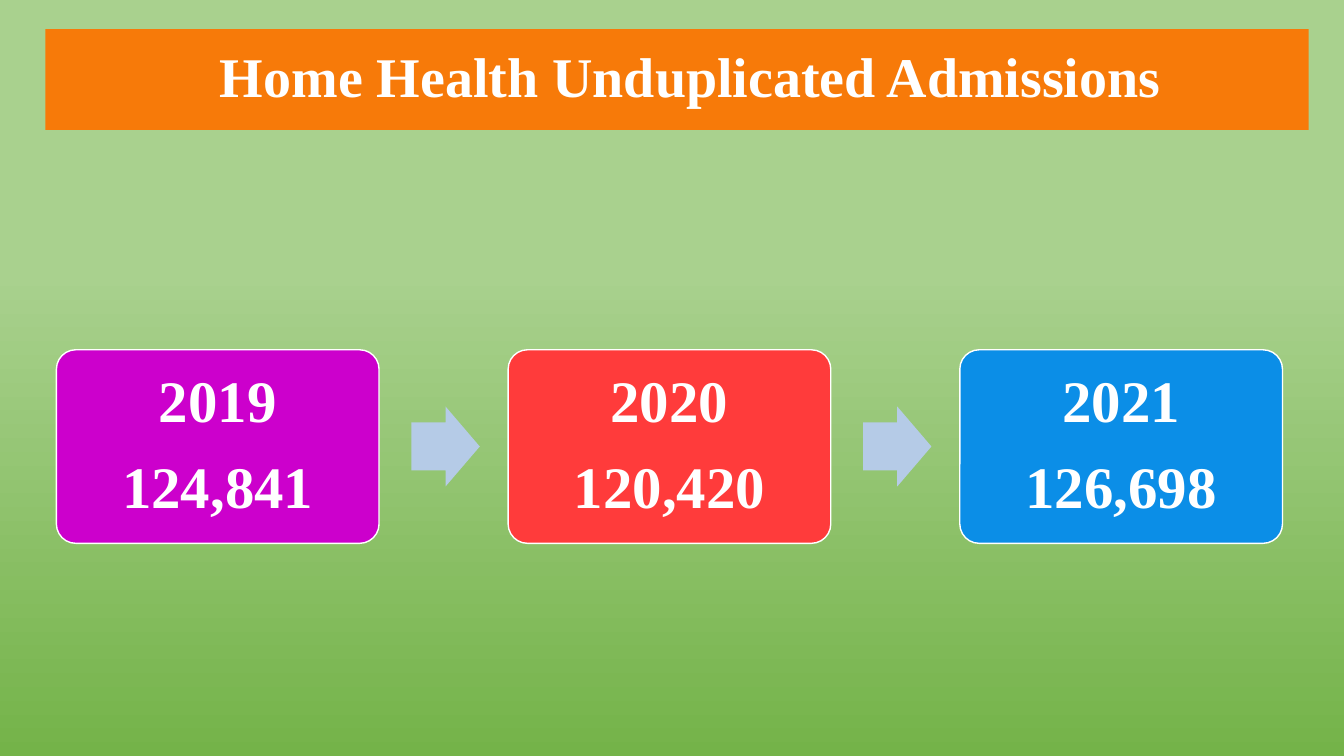
from pptx import Presentation
from pptx.dml.color import RGBColor
from pptx.enum.shapes import MSO_SHAPE
from pptx.enum.text import MSO_ANCHOR, PP_ALIGN
from pptx.util import Inches, Pt

FONT = "Times New Roman"
WHITE = "FFFFFF"
ADMISSIONS = [
    ("2019", "124,841", "CC00CC"),
    ("2020", "120,420", "FF3B3B"),
    ("2021", "126,698", "0B8EE7"),
]


def rgb(value):
    return RGBColor.from_string(value)


def add_box(s, kind, box, fill, line=None):
    sp = s.shapes.add_shape(kind, *[Inches(v) for v in box])
    sp.shadow.inherit = False
    sp.fill.solid()
    sp.fill.fore_color.rgb = rgb(fill)
    if line:
        sp.line.color.rgb = rgb(line)
        sp.line.width = Pt(1)
    else:
        sp.line.fill.background()
    return sp


def set_text(sp, text, size, gap=0):
    tf = sp.text_frame
    tf.text = text
    tf.word_wrap = True
    tf.vertical_anchor = MSO_ANCHOR.MIDDLE
    for p in tf.paragraphs:
        p.alignment = PP_ALIGN.CENTER
        p.line_spacing = 0.9
        for r in p.runs:
            r.font.name = FONT
            r.font.size = Pt(size)
            r.font.bold = True
            r.font.color.rgb = rgb(WHITE)
    for p in tf.paragraphs[:-1]:
        p.space_after = Pt(gap)


def paint_background(s):
    fill = s.background.fill
    fill.gradient()
    fill.gradient_angle = 90
    stops = [(0, "74B349"), (0.64, "A9D18E")]
    for stop, (position, color) in zip(fill.gradient_stops, stops):
        stop.position = position
        stop.color.rgb = rgb(color)


def add_title(s, box, text):
    sp = add_box(s, MSO_SHAPE.RECTANGLE, box, "F77A09")
    set_text(sp, text, 40)
    sp.text_frame.margin_left = Inches(0.36)


def add_process(s, box, steps):
    left, top, width, height = box
    # Each gap between cards is 0.4 of a card wide
    card_w = width / (len(steps) + 0.4 * (len(steps) - 1))
    arrow_w, arrow_h = 0.212 * card_w, 0.248 * card_w
    for i, (year, count, color) in enumerate(steps):
        x = left + 1.4 * card_w * i
        # Arrow from the previous card
        if i:
            arrow = add_box(s, MSO_SHAPE.RIGHT_ARROW,
                            (x - 0.3 * card_w, top + (height - arrow_h) / 2,
                             arrow_w, arrow_h), "B5CBE7")
            arrow.adjustments[0] = 0.6
            arrow.adjustments[1] = 0.5
        # Card with year and admissions
        card = add_box(s, MSO_SHAPE.ROUNDED_RECTANGLE,
                       (x, top, card_w, height), color, WHITE)
        card.adjustments[0] = 0.1
        set_text(card, f"{year}\n{count}", 42, gap=16.5)


def main():
    prs = Presentation()
    prs.slide_width, prs.slide_height = Inches(13.33), Inches(7.5)
    s = prs.slides.add_slide(prs.slide_layouts[6])
    paint_background(s)
    add_title(s, (0.45, 0.29, 12.53, 1), "Home Health Unduplicated Admissions")
    add_process(s, (0.56, 3.47, 12.16, 1.92), ADMISSIONS)
    prs.save("out.pptx")


if __name__ == "__main__":
    main()
